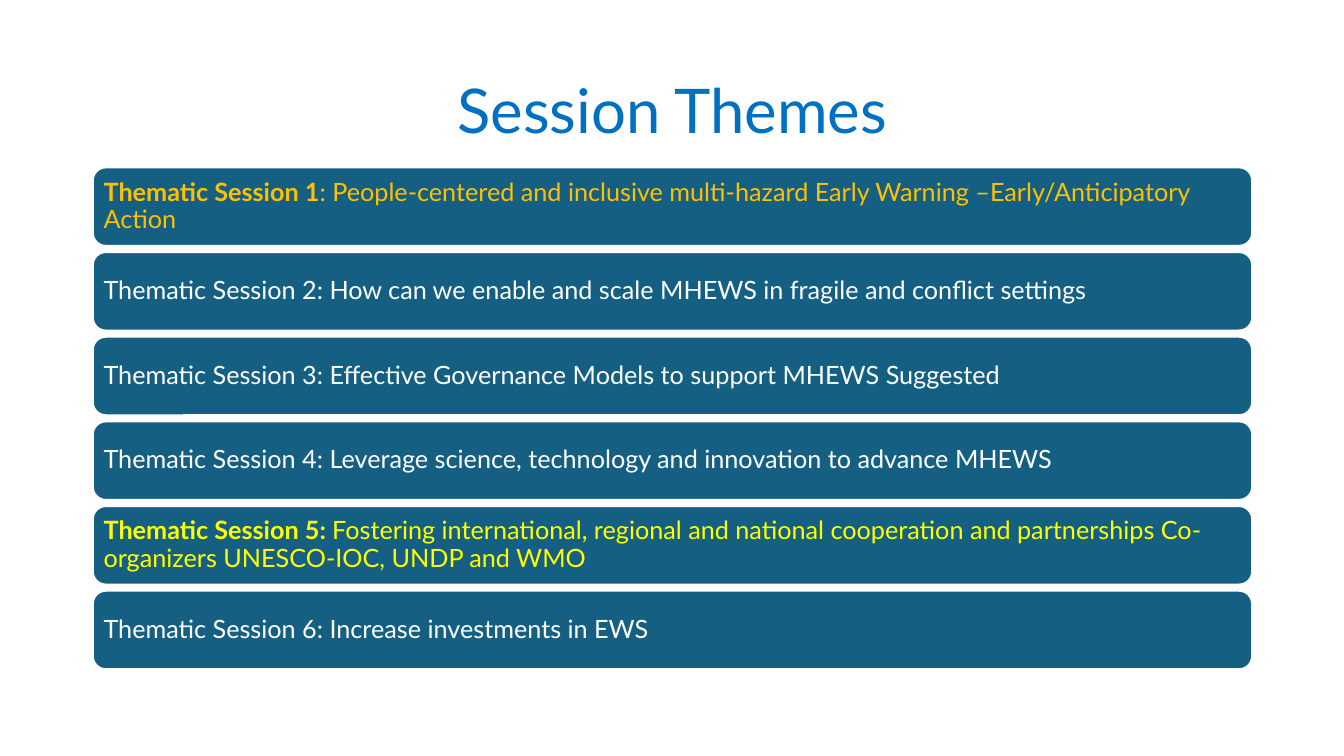
from pptx import Presentation
from pptx import util as u
from pptx.dml import color
from pptx.enum import shapes, text

COLORS = {
    "title": "0070C0",
    "bar": "156082",
    "white": "FFFFFF",
    "amber": "FFC000",
    "yellow": "FFFF00",
}
FONT = "Lato"

SESSIONS = [
    ("Thematic Session 1", ": People-centered and inclusive multi-hazard Early Warning –Early/Anticipatory Action", "amber"),
    ("", "Thematic Session 2: How can we enable and scale MHEWS in fragile and conflict settings", "white"),
    ("", "Thematic Session 3: Effective Governance Models to support MHEWS Suggested", "white"),
    ("", "Thematic Session 4: Leverage science, technology and innovation to advance MHEWS", "white"),
    ("Thematic Session 5: ", "Fostering international, regional and national cooperation and partnerships Co-organizers UNESCO-IOC, UNDP and WMO", "yellow"),
    ("", "Thematic Session 6: Increase investments in EWS", "white"),
]
LEFT, WIDTH = u.Inches(0.92), u.Inches(11.5)
FIRST_TOP, BAR_HEIGHT, PITCH = 1.66, 0.78, 0.84


def rgb(name):
    return color.RGBColor.from_string(COLORS[name])


def add_run(paragraph, words, size, color_name, bold=False):
    run = paragraph.add_run()
    run.text = words
    run.font.name = FONT
    run.font.size = u.Pt(size)
    run.font.bold = bold
    run.font.color.rgb = rgb(color_name)


prs = Presentation()
prs.slide_width = u.Inches(13.33)
prs.slide_height = u.Inches(7.5)
slide = prs.slides.add_slide(prs.slide_layouts[6])

title = slide.shapes.add_textbox(LEFT, u.Inches(0.4), WIDTH, u.Inches(1.45)).text_frame
title.word_wrap = True
title.vertical_anchor = text.MSO_ANCHOR.MIDDLE
heading = title.paragraphs[0]
heading.alignment = text.PP_ALIGN.CENTER
heading.line_spacing = 0.9
add_run(heading, "Session Themes", 44, "title")

for row, (label, theme, color_name) in enumerate(SESSIONS):
    bar = slide.shapes.add_shape(
        shapes.MSO_SHAPE.ROUNDED_RECTANGLE,
        LEFT, u.Inches(FIRST_TOP + row * PITCH), WIDTH, u.Inches(BAR_HEIGHT),
    )
    bar.shadow.inherit = False
    bar.fill.solid()
    bar.fill.fore_color.rgb = rgb("bar")
    bar.line.color.rgb = rgb("white")
    bar.line.width = u.Pt(1.5)

    frame = bar.text_frame
    frame.word_wrap = True
    frame.vertical_anchor = text.MSO_ANCHOR.MIDDLE
    frame.margin_left = frame.margin_right = u.Inches(0.07)
    frame.margin_top = frame.margin_bottom = u.Inches(0.07)
    session = frame.paragraphs[0]
    session.alignment = text.PP_ALIGN.LEFT
    session.line_spacing = 0.9
    if label:
        add_run(session, label, 18, color_name, bold=True)
    add_run(session, theme, 18, color_name)

prs.save("out.pptx")
